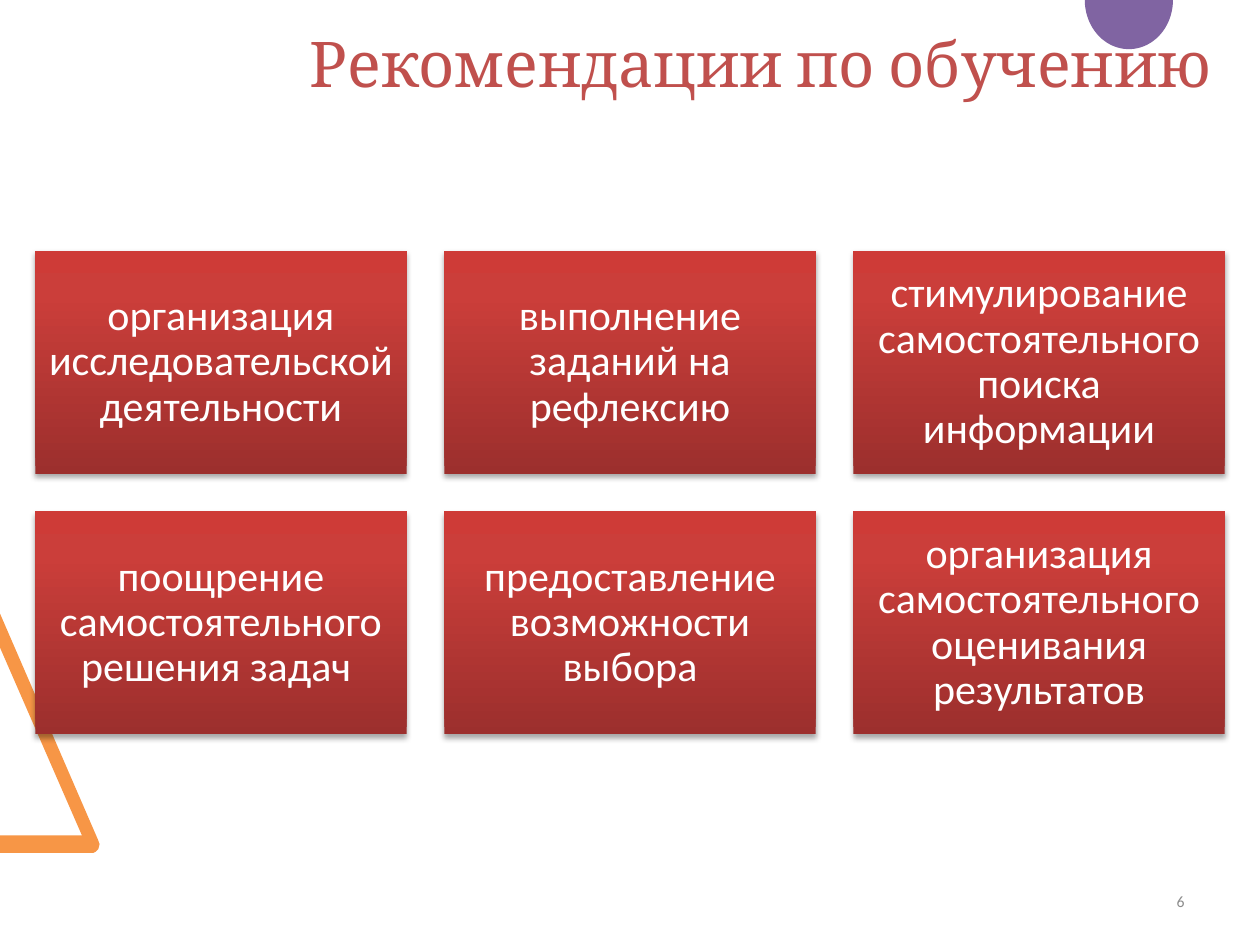
import copy
import math

import lxml.etree
import pptx
import pptx.dml.color
import pptx.enum.shapes
import pptx.enum.text
import pptx.oxml.ns
import pptx.util

Inches = pptx.util.Inches
ALIGN = pptx.enum.text.PP_ALIGN

TITLE = "Рекомендации по обучению"
RECOMMENDATIONS = [
    "организация исследовательской деятельности",
    "выполнение заданий на рефлексию",
    "стимулирование самостоятельного поиска информации",
    "поощрение самостоятельного решения задач ",
    "предоставление возможности выбора",
    "организация самостоятельного оценивания результатов",
]
CARD_GRADIENT = [(0, "9C2F2D"), (0.8, "CB3E3A"), (1, "CE3B37")]


def color(value):
    """Return the colour for a hex string."""
    return pptx.dml.color.RGBColor.from_string(value)


def write_text(shape, text, size, font, fill, align, spacing=1.0, inset=0.1, inset_y=0.05):
    """Write one formatted, vertically centred paragraph into a shape."""
    frame = shape.text_frame
    frame.word_wrap = True
    frame.auto_size = pptx.enum.text.MSO_AUTO_SIZE.NONE
    frame.vertical_anchor = pptx.enum.text.MSO_ANCHOR.MIDDLE
    frame.margin_left = frame.margin_right = Inches(inset)
    frame.margin_top = frame.margin_bottom = Inches(inset_y)
    paragraph = frame.paragraphs[0]
    paragraph.text = text
    paragraph.alignment = align
    paragraph.line_spacing = spacing
    paragraph.font.size = pptx.util.Pt(size)
    paragraph.font.name = font
    paragraph.font.color.rgb = color(fill)


def add_outline(slide, left, top, points, fill):
    """Draw a filled freeform from points relative to its corner."""
    places = [(Inches(left + x), Inches(top + y)) for x, y in points]
    builder = slide.shapes.build_freeform(*places[0])
    builder.add_line_segments(places[1:], close=True)
    shape = builder.convert_to_shape()
    shape.fill.solid()
    shape.fill.fore_color.rgb = color(fill)
    shape.line.fill.background()
    shape.shadow.inherit = False


def add_triangle(slide, left, top):
    """Draw the visible corner of the orange triangle frame."""
    corner = [(0.78, 1.8), (0.79, 1.83), (0.78, 1.87), (0.76, 1.89), (0.74, 1.9)]
    inside = [(0, 1.9), (0, 1.76), (0.65, 1.76), (0, 0.27)]
    add_outline(slide, left, top, [(0, 0)] + corner + inside, "F79646")


def add_half_ellipse(slide, left, top, width, height, steps=48):
    """Draw the lower half of the purple ellipse."""
    angles = [math.pi * step / steps for step in range(steps + 1)]
    points = [(width / 2 * (1 + math.cos(a)), height * math.sin(a)) for a in angles]
    add_outline(slide, left, top, points, "8064A2")


def add_title(slide, left, top, width, height):
    """Place the title in front of the decorations."""
    title = slide.shapes.title
    title.left, title.top = Inches(left), Inches(top)
    title.width, title.height = Inches(width), Inches(height)
    write_text(title, TITLE, 36, "Cambria", "C0504D", ALIGN.RIGHT)
    slide.shapes._spTree.append(title._element)


def add_gradient(shape, stops, angle):
    """Fill a shape with a linear gradient of any number of stops."""
    shape.fill.gradient()
    shape.fill.gradient_angle = angle
    stop_list = shape._element.spPr.find(".//" + pptx.oxml.ns.qn("a:gsLst"))
    while len(stop_list) < len(stops):
        stop_list.append(copy.deepcopy(stop_list[-1]))
    for stop, (position, value) in zip(shape.fill.gradient_stops, stops):
        stop.position = position
        stop.color.rgb = color(value)


def add_shadow(shape):
    """Give a shape a soft shadow below it."""
    shape.shadow.inherit = False
    effects = shape._element.spPr.find(pptx.oxml.ns.qn("a:effectLst"))
    shadow = lxml.etree.SubElement(
        effects, pptx.oxml.ns.qn("a:outerShdw"), rotWithShape="0", dir="5400000",
        blurRad=str(pptx.util.Pt(3.1)), dist=str(pptx.util.Pt(1.8)))
    black = lxml.etree.SubElement(shadow, pptx.oxml.ns.qn("a:srgbClr"), val="000000")
    lxml.etree.SubElement(black, pptx.oxml.ns.qn("a:alpha"), val="35000")


def add_card(slide, text, left, top, width, height):
    """Draw one recommendation card."""
    card = slide.shapes.add_shape(
        pptx.enum.shapes.MSO_SHAPE.RECTANGLE,
        Inches(left), Inches(top), Inches(width), Inches(height))
    card.line.fill.background()
    add_gradient(card, CARD_GRADIENT, 90)
    add_shadow(card)
    write_text(card, text, 24, "Calibri", "FFFFFF", ALIGN.CENTER, spacing=0.9, inset_y=0.1)


def add_cards(slide, left, top, width, height, columns=3, rows=2, gap=0.3):
    """Lay the recommendation cards out in a grid."""
    card_width = (width - gap * (columns - 1)) / columns
    card_height = (height - gap * (rows - 1)) / rows
    for index, text in enumerate(RECOMMENDATIONS):
        row, column = divmod(index, columns)
        add_card(slide, text, left + column * (card_width + gap),
                 top + row * (card_height + gap), card_width, card_height)


def add_slide_number(slide, left, top, width, height):
    """Write the slide number."""
    box = slide.shapes.add_textbox(Inches(left), Inches(top), Inches(width), Inches(height))
    write_text(box, "6", 9, "Calibri", "8C8C8C", ALIGN.RIGHT)


def main():
    """Build and save the presentation."""
    presentation = pptx.Presentation()
    presentation.slide_width, presentation.slide_height = Inches(10), Inches(7.5)
    slide = presentation.slides.add_slide(presentation.slide_layouts[5])
    add_triangle(slide, 0, 4.87)
    add_half_ellipse(slide, 8.61, 0, 0.7, 0.39)
    add_title(slide, 1.85, 0, 7.87, 0.99)
    add_slide_number(slide, 7.17, 6.95, 2.33, 0.4)
    add_cards(slide, 0.28, 1.99, 9.44, 3.84)
    presentation.save("out.pptx")


if __name__ == "__main__":
    main()
